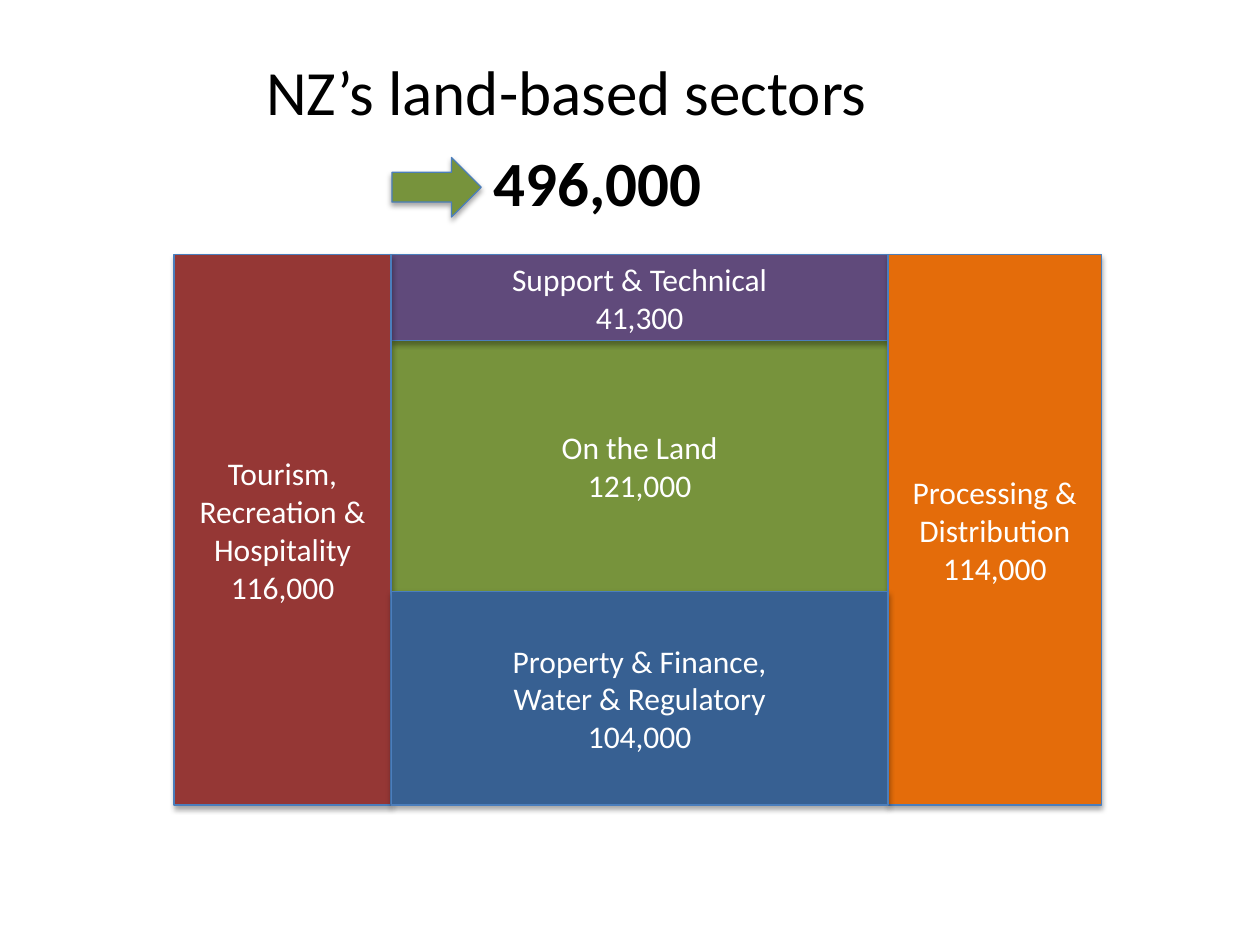
from lxml import etree
from pptx import Presentation
from pptx.dml.color import RGBColor
from pptx.enum.shapes import MSO_SHAPE
from pptx.enum.text import MSO_ANCHOR, PP_ALIGN
from pptx.oxml.ns import qn
from pptx.util import Pt

RECT, ARROW = MSO_SHAPE.RECTANGLE, MSO_SHAPE.RIGHT_ARROW
MIDDLE, TOP = MSO_ANCHOR.MIDDLE, MSO_ANCHOR.TOP
CENTER, LEFT = PP_ALIGN.CENTER, PP_ALIGN.LEFT
BLACK = RGBColor(0x00, 0x00, 0x00)
WHITE = RGBColor(0xFF, 0xFF, 0xFF)
GREEN = RGBColor(0x77, 0x93, 0x3C)
PURPLE = RGBColor(0x60, 0x4A, 0x7B)
ORANGE = RGBColor(0xE4, 0x6C, 0x0A)
RED = RGBColor(0x95, 0x37, 0x35)
BLUE = RGBColor(0x37, 0x60, 0x92)
EDGE = RGBColor(0x4B, 0x7E, 0xBC)


def add_shade(shape):
    """Give a shape a soft black shadow below it."""
    shape.shadow.inherit = False
    effects = shape._element.spPr.find(qn("a:effectLst"))
    shade = etree.SubElement(
        effects, qn("a:outerShdw"), blurRad=str(Pt(3.1)), dist=str(Pt(1.8)),
        dir="5400000", rotWithShape="0")
    color = etree.SubElement(shade, qn("a:srgbClr"), val=str(BLACK))
    etree.SubElement(color, qn("a:alpha"), val="35000")


def add_block(shapes, kind, box, fill):
    """Add a filled, edged and shaded shape."""
    block = shapes.add_shape(kind, *map(Pt, box))
    block.fill.solid()
    block.fill.fore_color.rgb = fill
    block.line.color.rgb = EDGE
    block.line.width = Pt(0.75)
    add_shade(block)
    return block


def write(shape, lines, size, color, align=CENTER, anchor=MIDDLE, bold=False):
    """Write one paragraph per line, with breaks at newlines."""
    frame = shape.text_frame
    frame.word_wrap = True
    frame.vertical_anchor = anchor
    for index, line in enumerate(lines):
        para = frame.add_paragraph() if index else frame.paragraphs[0]
        para.alignment = align
        for order, part in enumerate(line.split("\n")):
            if order:
                para.add_line_break()
            run = para.add_run()
            run.text = part
            run.font.name = "Calibri"
            run.font.size = Pt(size)
            run.font.bold = bold
            run.font.color.rgb = color


def add_title(slide, box):
    """Add the slide title."""
    title = slide.shapes.add_textbox(*map(Pt, box))
    write(title, ["NZ’s land-based sectors"], 36, BLACK)


def add_total(slide, box):
    """Add the group of arrow and total figure."""
    left, top, width, height = box
    arrow = 51
    group = slide.shapes.add_group_shape()
    add_block(group.shapes, ARROW, (left, top + 11.5, arrow, 34), GREEN)
    label = group.shapes.add_textbox(
        *map(Pt, (left + arrow, top, width - arrow, height)))
    write(label, ["496,000"], 36, BLACK, LEFT, TOP, True)


def add_map(slide, box):
    """Add sector blocks: a side column each way and three rows between."""
    left, top, width, height = box
    west, east, north, south = 124, 122, 49, 122
    mid, core = left + west, width - west - east
    land = height - north - south
    blocks = [
        ((mid, top + north, core, land), GREEN, ["On the Land", "121,000"]),
        ((mid, top, core, north), PURPLE, ["Support & Technical", "41,300"]),
        ((mid + core, top, east, height), ORANGE,
         ["Processing &", "Distribution", "114,000"]),
        ((left, top, west, height), RED,
         ["Tourism, Recreation & Hospitality", "116,000"]),
        ((mid, top + north + land, core, south), BLUE,
         ["Property & Finance,\nWater & Regulatory", "104,000"]),
    ]
    for area, fill, lines in blocks:
        write(add_block(slide.shapes, RECT, area, fill), lines, 18, WHITE)


def main():
    """Build and save the slide."""
    deck = Presentation()
    deck.slide_width, deck.slide_height = Pt(720), Pt(540)
    slide = deck.slides.add_slide(deck.slide_layouts[6])
    add_title(slide, (99.5, 15, 448.5, 73))
    add_total(slide, (224, 78.5, 193, 51))
    add_map(slide, (99.5, 145.5, 530, 314.5))
    deck.save("out.pptx")


if __name__ == "__main__":
    main()
